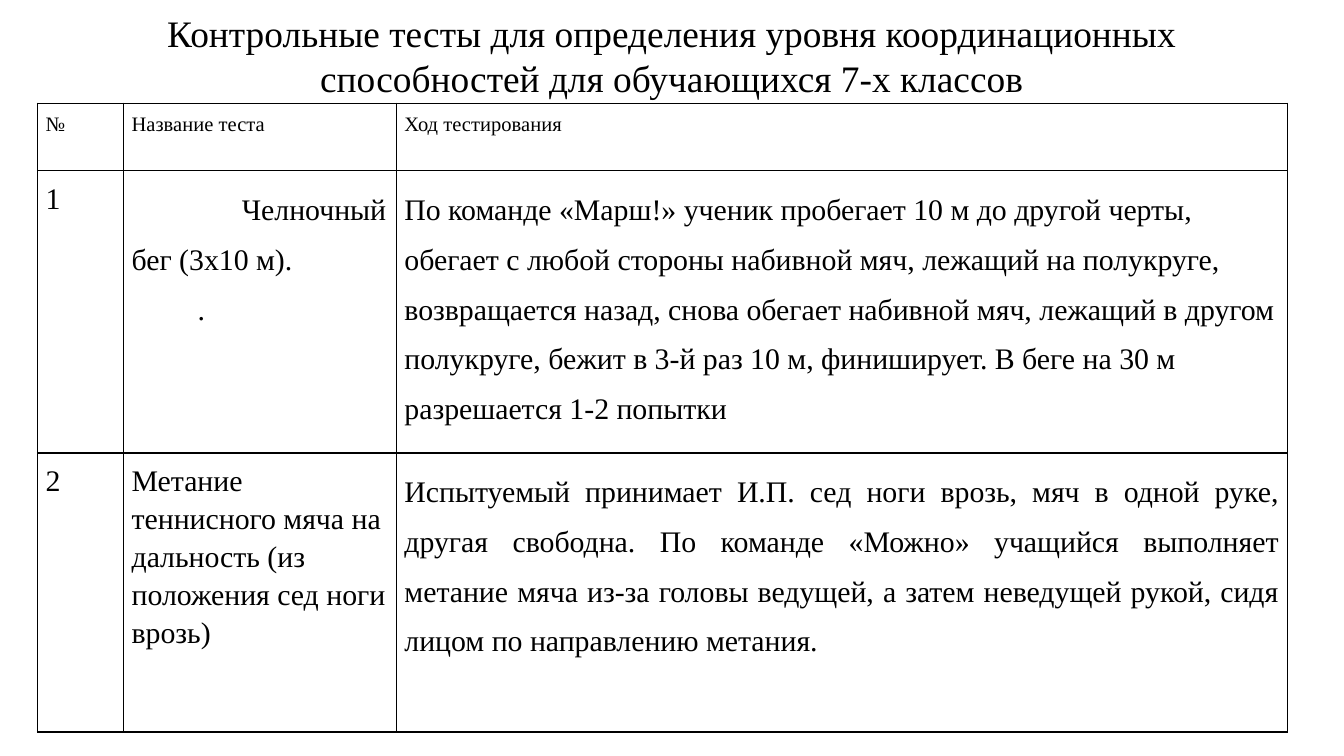
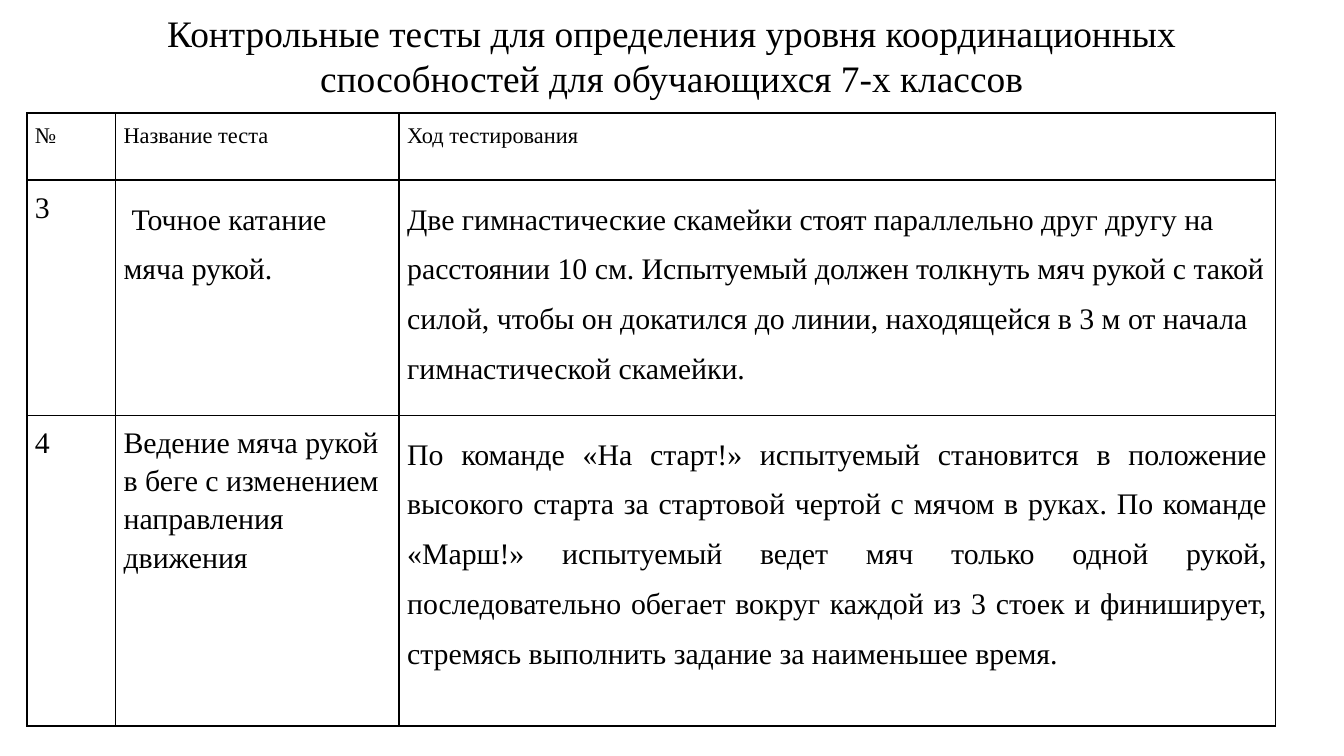
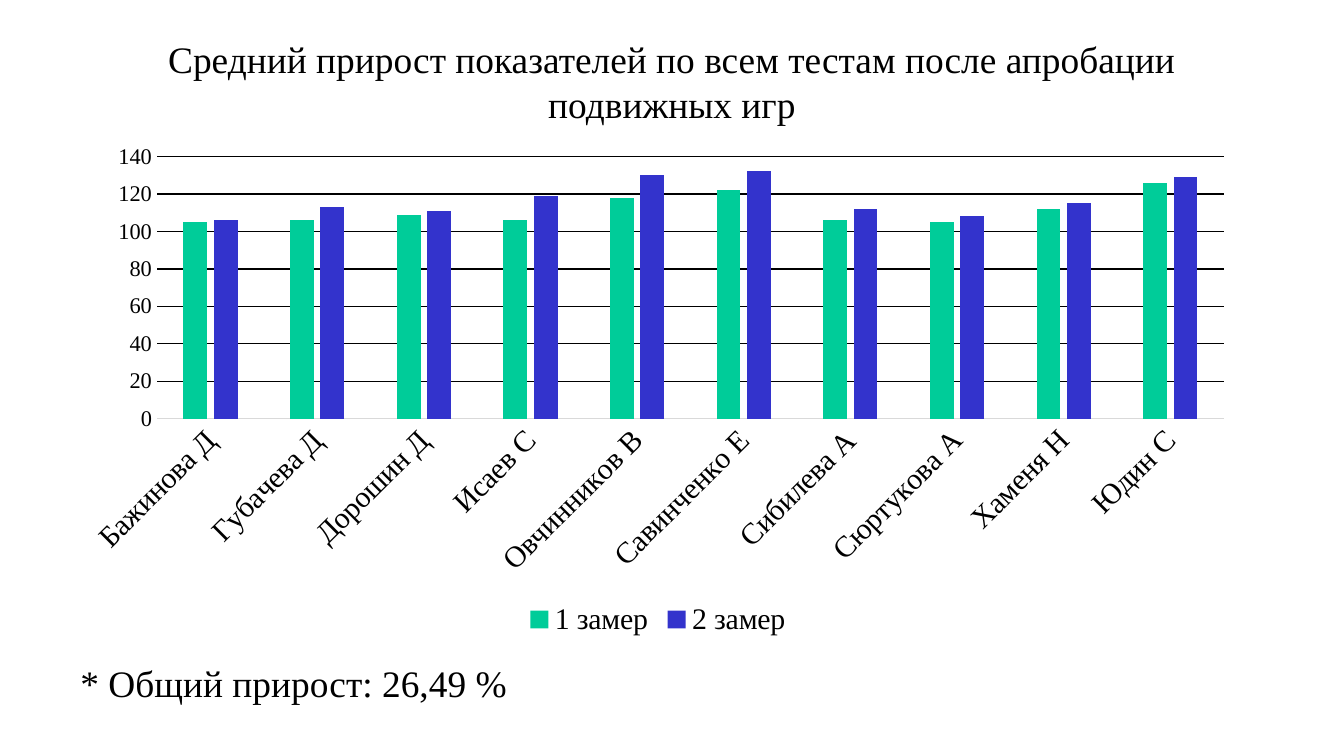
import dataclasses
import typing

import lxml.etree
import pptx
import pptx.chart.data
import pptx.dml.color
import pptx.enum.chart
import pptx.enum.text
import pptx.oxml.ns
import pptx.util

Inches = pptx.util.Inches
Align = pptx.enum.text.PP_ALIGN
Anchor = pptx.enum.text.MSO_ANCHOR
qn = pptx.oxml.ns.qn


@dataclasses.dataclass(frozen=True)
class Theme:
    font: str = "Times New Roman"
    ink: str = "000000"
    axis: str = "D9D9D9"
    bars: tuple[str, ...] = ("00CC99", "3333CC")
    title: int = 20
    text: int = 16
    scale: int = 12


THEME = Theme()


@dataclasses.dataclass(frozen=True)
class Para:
    text: str
    lead: float = 1.15
    align: typing.Any = Align.LEFT
    indent: float = 0


@dataclasses.dataclass(frozen=True)
class Test:
    """One table row: number, name of the test, how it runs."""
    number: str
    name: list[Para]
    course: Para


@dataclasses.dataclass(frozen=True)
class Grid:
    left: float
    top: float
    height: float
    widths: tuple[float, ...]
    rows: tuple[float, ...]
    head: int
    tests: list[Test]


HEADS = ("№", "Название теста", "Ход тестирования")
TESTS_TITLE = ("Контрольные тесты для определения уровня координационных "
               "способностей для обучающихся 7-х классов")
GROWTH_TITLE = "Средний прирост показателей по всем тестам после апробации подвижных игр"

GRIDS = [
    Grid(0.28, 0.77, 4.68, (0.64, 2.03, 6.63), (0.5, 1.99, 2.08), 11, [
        Test("1",
             [Para("Челночный бег (3х10 м).", 1.5, Align.JUSTIFY, 0.82),
              Para(".", 1.5, Align.JUSTIFY, 0.49)],
             Para("По команде «Марш!» ученик пробегает 10 м до другой черты, "
                  "обегает с любой стороны набивной мяч, лежащий на полукруге, "
                  "возвращается назад, снова обегает набивной мяч, лежащий в другом "
                  "полукруге, бежит в 3-й раз 10 м, финиширует. В беге на 30 м "
                  "разрешается 1-2 попытки", 1.5)),
        Test("2",
             [Para("Метание теннисного мяча на дальность (из положения сед ноги врозь)")],
             Para("Испытуемый принимает И.П. сед ноги врозь, мяч в одной руке, "
                  "другая свободна. По команде «Можно» учащийся выполняет "
                  "метание мяча из-за головы ведущей, а затем неведущей рукой, сидя "
                  "лицом по направлению метания.", 1.5, Align.JUSTIFY)),
    ]),
    Grid(0.2, 0.84, 4.57, (0.66, 2.11, 6.52), (0.5, 1.75, 2.31), 12, [
        Test("3",
             [Para("Точное катание мяча рукой.", 1.5, indent=0.06)],
             Para("Две гимнастические скамейки стоят параллельно друг другу на "
                  "расстоянии 10 см. Испытуемый должен толкнуть мяч рукой с такой "
                  "силой, чтобы он докатился до линии, находящейся в 3 м от начала "
                  "гимнастической скамейки.", 1.5)),
        Test("4",
             [Para("Ведение мяча рукой в беге с изменением направления движения")],
             Para("По команде «На старт!» испытуемый становится в положение "
                  "высокого старта за стартовой чертой с мячом в руках. По команде "
                  "«Марш!» испытуемый ведет мяч только одной рукой, "
                  "последовательно обегает вокруг каждой из 3 стоек и финиширует, "
                  "стремясь выполнить задание за наименьшее время.", 1.5, Align.JUSTIFY)),
    ]),
]

PUPILS = ("Бажинова Д", "Губачева Д", "Дорошин Д", "Исаев С", "Овчинников В",
          "Савинченко Е", "Сибилева А", "Сюртукова А", "Хаменя Н", "Юдин С")
SCORES = {
    "1 замер": (105, 106, 109, 106, 118, 122, 106, 105, 112, 126),
    "2 замер": (106, 113, 111, 119, 130, 132, 112, 108, 115, 129),
}


def tint(code: str) -> pptx.dml.color.RGBColor:
    return pptx.dml.color.RGBColor.from_string(code)


def style(font: typing.Any, size: int) -> None:
    font.name = THEME.font
    font.size = pptx.util.Pt(size)
    font.color.rgb = tint(THEME.ink)


def write(frame: typing.Any, paras: list[Para], size: int) -> None:
    frame.word_wrap = True
    frame.text = "\n".join(para.text for para in paras)
    for line, para in zip(frame.paragraphs, paras):
        line.alignment = para.align
        line.line_spacing = para.lead
        if para.indent:
            line._p.get_or_add_pPr().set("indent", str(Inches(para.indent)))
        for run in line.runs:
            style(run.font, size)


def add_text(slide: typing.Any, para: Para, top: float, height: float,
             anchor: typing.Any = Anchor.TOP, foot: float = 0.05) -> None:
    box = slide.shapes.add_textbox(Inches(0.5), Inches(top), Inches(9), Inches(height))
    frame = box.text_frame
    write(frame, [para], THEME.title)
    frame.vertical_anchor = anchor
    frame.margin_bottom = Inches(foot)


def add_title(slide: typing.Any, text: str, height: float, foot: float = 0.05) -> None:
    add_text(slide, Para(text, 1, Align.CENTER), 0.21, height, Anchor.MIDDLE, foot)


def frame_cell(cell: typing.Any) -> None:
    """Give a cell thin borders on all sides, even margins and no fill."""
    props = cell._tc.get_or_add_tcPr()
    for side in ("a:lnL", "a:lnR", "a:lnT", "a:lnB"):
        edge = lxml.etree.SubElement(props, qn(side), w=str(pptx.util.Pt(1)))
        fill = lxml.etree.SubElement(edge, qn("a:solidFill"))
        lxml.etree.SubElement(fill, qn("a:srgbClr"), val=THEME.ink)
    cell.fill.background()
    cell.margin_left = cell.margin_right = Inches(0.06)
    cell.margin_top = cell.margin_bottom = Inches(0.05)


def add_grid(slide: typing.Any, grid: Grid) -> None:
    rows = [[[Para(head)] for head in HEADS]]
    rows += [[[Para(test.number)], test.name, [test.course]] for test in grid.tests]
    shape = slide.shapes.add_table(
        len(rows), len(HEADS), Inches(grid.left), Inches(grid.top),
        Inches(sum(grid.widths)), Inches(grid.height))
    table = shape.table
    table.first_row = table.horz_banding = False
    for column, width in zip(table.columns, grid.widths):
        column.width = Inches(width)
    for index, (row, height) in enumerate(zip(table.rows, grid.rows)):
        row.height = Inches(height)
        for cell, paras in zip(row.cells, rows[index]):
            frame_cell(cell)
            write(cell.text_frame, paras, THEME.text if index else grid.head)
    shape.height = Inches(grid.height)


def add_chart(slide: typing.Any) -> None:
    data = pptx.chart.data.CategoryChartData()
    data.categories = PUPILS
    for name, scores in SCORES.items():
        data.add_series(name, scores)
    chart = slide.shapes.add_chart(
        pptx.enum.chart.XL_CHART_TYPE.COLUMN_CLUSTERED,
        Inches(0.51), Inches(1), Inches(8.77), Inches(3.78), data).chart
    style(chart.font, 10)
    chart.has_title = False
    chart.has_legend = True
    chart.legend.position = pptx.enum.chart.XL_LEGEND_POSITION.BOTTOM
    chart.legend.include_in_layout = False
    style(chart.legend.font, THEME.text)

    plot = chart.plots[0]
    plot.gap_width, plot.overlap = 219, -27
    plot.vary_by_categories = False
    for series, code in zip(plot.series, THEME.bars):
        series.format.fill.solid()
        series.format.fill.fore_color.rgb = tint(code)

    names, scale = chart.category_axis, chart.value_axis
    for axis, size in ((names, THEME.text), (scale, THEME.scale)):
        axis.major_tick_mark = axis.minor_tick_mark = pptx.enum.chart.XL_TICK_MARK.NONE
        style(axis.tick_labels.font, size)
    names._element.find(qn("c:txPr")).find(qn("a:bodyPr")).set("rot", str(-45 * 60000))
    scale.minimum_scale, scale.maximum_scale, scale.major_unit = 0, 140, 20
    scale.format.line.fill.background()
    scale.has_major_gridlines = True
    for line, code in ((names.format.line, THEME.axis),
                       (scale.major_gridlines.format.line, THEME.ink)):
        line.width = pptx.util.Pt(0.75)
        line.color.rgb = tint(code)


def main() -> None:
    deck = pptx.Presentation()
    deck.slide_width = Inches(10)
    deck.slide_height = deck.slide_width * 9 // 16
    blank = deck.slide_layouts[6]
    for grid in GRIDS:
        slide = deck.slides.add_slide(blank)
        add_title(slide, TESTS_TITLE, 0.71, foot=0.36)
        add_grid(slide, grid)
    slide = deck.slides.add_slide(blank)
    add_title(slide, GROWTH_TITLE, 0.79)
    add_text(slide, Para("* Общий прирост: 26,49 %", 1), 4.86, 0.39)
    add_chart(slide)
    deck.save("out.pptx")


if __name__ == "__main__":
    main()
